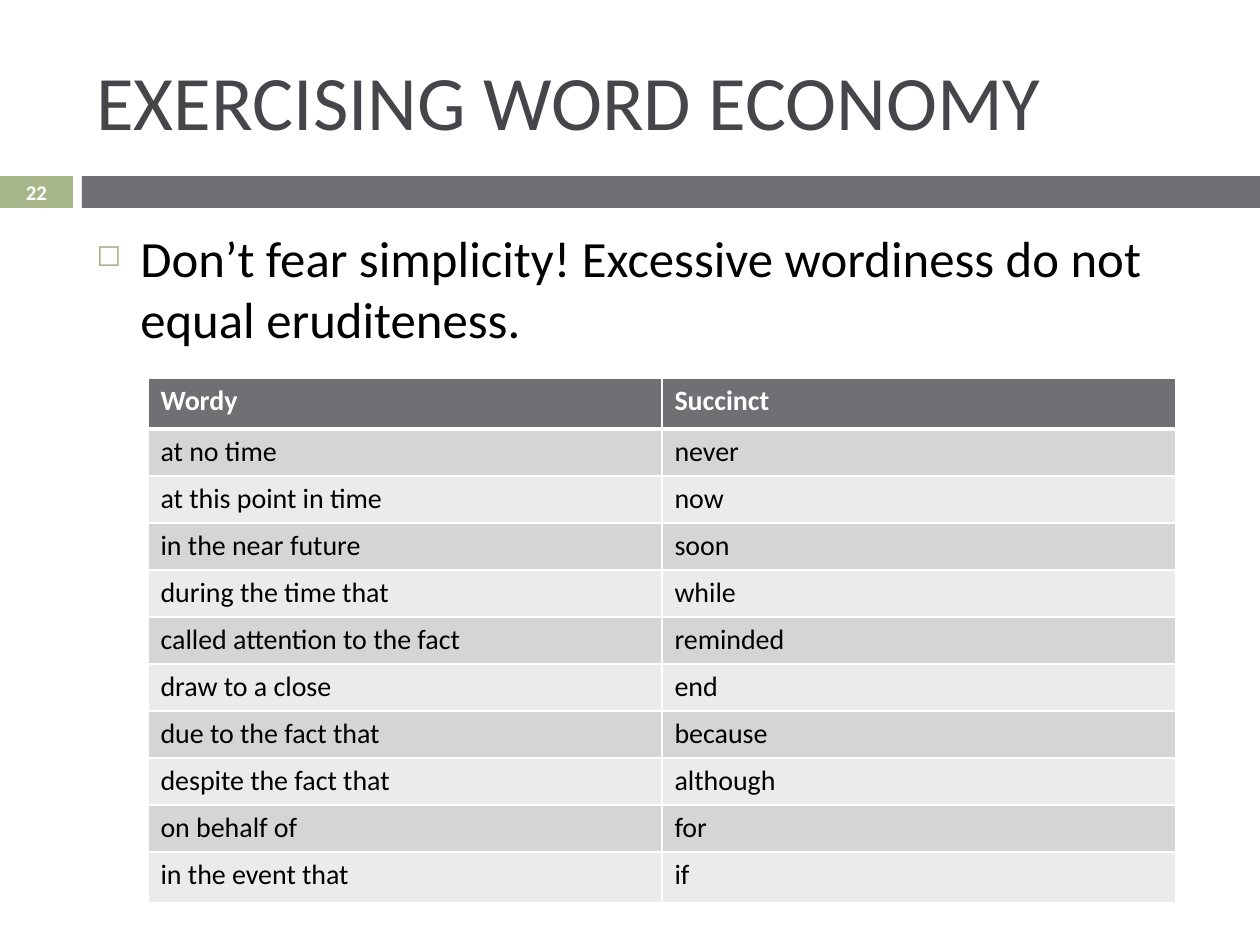
from dataclasses import dataclass

from lxml import etree
from pptx import Presentation
from pptx.dml.color import RGBColor
from pptx.enum.shapes import MSO_SHAPE
from pptx.enum.text import MSO_ANCHOR, PP_ALIGN
from pptx.oxml.ns import qn
from pptx.util import Pt

RECTANGLE = MSO_SHAPE.RECTANGLE
TOP, MIDDLE = MSO_ANCHOR.TOP, MSO_ANCHOR.MIDDLE
CENTER = PP_ALIGN.CENTER
EMU_PER_PX = 914400 / 126


@dataclass(frozen=True)
class Theme:
    """Colours, font and type sizes of the slide."""
    font: str = "Calibri"
    accent: str = "A7B789"
    band: str = "6F6F74"
    title: str = "46464A"
    ink: str = "000000"
    paper: str = "FFFFFF"
    stripes: tuple = ("D5D5D6", "EBEBEB")
    title_size: float = 44
    body_size: float = 29
    table_size: float = 16
    number_size: float = 11.9


THEME = Theme()
HEADER = ("Wordy", "Succinct")
PHRASES = [
    ("at no time", "never"),
    ("at this point in time", "now"),
    ("in the near future", "soon"),
    ("during the time that", "while"),
    ("called attention to the fact", "reminded"),
    ("draw to a close", "end"),
    ("due to the fact that", "because"),
    ("despite the fact that", "although"),
    ("on behalf of", "for"),
    ("in the event that", "if"),
]


def px(length):
    """Turn pixels into EMU."""
    return round(length * EMU_PER_PX)


def add_run(paragraph, text, size, color, bold=False):
    """Add one styled run to a paragraph."""
    run = paragraph.add_run()
    run.text = text
    run.font.name = THEME.font
    run.font.size = Pt(size)
    run.font.bold = bold
    run.font.color.rgb = RGBColor.from_string(color)


def add_block(slide, box, color):
    """Add a plain filled rectangle."""
    block = slide.shapes.add_shape(RECTANGLE, *map(px, box))
    block.shadow.inherit = False
    block.fill.solid()
    block.fill.fore_color.rgb = RGBColor.from_string(color)
    block.line.fill.background()
    return block


def add_text(slide, box, text, size, color, anchor):
    """Add a wrapping text box and return its paragraph."""
    frame = slide.shapes.add_textbox(*map(px, box)).text_frame
    frame.word_wrap = True
    frame.vertical_anchor = anchor
    paragraph = frame.paragraphs[0]
    add_run(paragraph, text, size, color)
    return paragraph


def add_bullet(paragraph, symbol, color, percent, indent):
    """Give a paragraph a coloured hanging bullet."""
    properties = paragraph._p.get_or_add_pPr()
    properties.set("marL", str(px(indent)))
    properties.set("indent", str(-px(indent)))
    bullet_color = etree.SubElement(properties, qn("a:buClr"))
    etree.SubElement(bullet_color, qn("a:srgbClr"), val=color)
    etree.SubElement(properties, qn("a:buSzPct"), val=str(percent * 1000))
    etree.SubElement(properties, qn("a:buChar"), char=symbol)


def add_number_band(slide, box, number):
    """Add the page number block and the bar beside it."""
    left, top, width, height = box
    number_width, gap = 73, 9
    bar_left = number_width + gap
    number_block = add_block(slide, (left, top, number_width, height), THEME.accent)
    add_block(slide, (left + bar_left, top, width - bar_left, height), THEME.band)
    frame = number_block.text_frame
    frame.margin_top = frame.margin_bottom = 0
    frame.vertical_anchor = MIDDLE
    frame.paragraphs[0].alignment = CENTER
    add_run(frame.paragraphs[0], number, THEME.number_size, THEME.paper, True)


def add_borders(cell, bottom_points):
    """Rule a cell with white lines."""
    properties = cell._tc.get_or_add_tcPr()
    edges = (("a:lnL", 1), ("a:lnR", 1), ("a:lnT", 1), ("a:lnB", bottom_points))
    for position, (edge, points) in enumerate(edges):
        line = etree.Element(qn(edge), w=str(Pt(points)))
        fill = etree.SubElement(line, qn("a:solidFill"))
        etree.SubElement(fill, qn("a:srgbClr"), val=THEME.paper)
        properties.insert(position, line)


def add_phrase_table(slide, box):
    """Add the table of wordy phrases and their short forms."""
    left, top, width, height = box
    rows = [HEADER, *PHRASES]
    edge_height = 51
    inner_height = (height - 2 * edge_height) // (len(rows) - 2)
    table = slide.shapes.add_table(len(rows), len(HEADER), *map(px, box)).table
    for column in table.columns:
        column.width = px(width / len(HEADER))
    for index, phrases in enumerate(rows):
        is_header = index == 0
        is_edge = index in (0, len(rows) - 1)
        table.rows[index].height = px(edge_height if is_edge else inner_height)
        background = THEME.band if is_header else THEME.stripes[(index - 1) % 2]
        ink = THEME.paper if is_header else THEME.ink
        for cell, phrase in zip(table.rows[index].cells, phrases):
            cell.fill.solid()
            cell.fill.fore_color.rgb = RGBColor.from_string(background)
            add_run(cell.text_frame.paragraphs[0], phrase, THEME.table_size, ink, is_header)
            add_borders(cell, 3 if is_header else 1)


def main():
    """Build and save the slide."""
    deck = Presentation()
    deck.slide_width, deck.slide_height = px(1260), px(945)
    slide = deck.slides.add_slide(deck.slide_layouts[6])
    add_number_band(slide, (0, 176, 1260, 32), "22")
    add_text(slide, (84, 32, 1124, 136), "EXERCISING WORD ECONOMY",
             THEME.title_size, THEME.title, MIDDLE)
    advice = add_text(
        slide, (84, 221, 1124, 147),
        "Don’t fear simplicity! Excessive wordiness do not equal eruditeness.",
        THEME.body_size, THEME.ink, TOP)
    add_bullet(advice, "◻", THEME.accent, 60, 44)
    add_phrase_table(slide, (148, 378, 1028, 525))
    deck.save("out.pptx")


if __name__ == "__main__":
    main()
